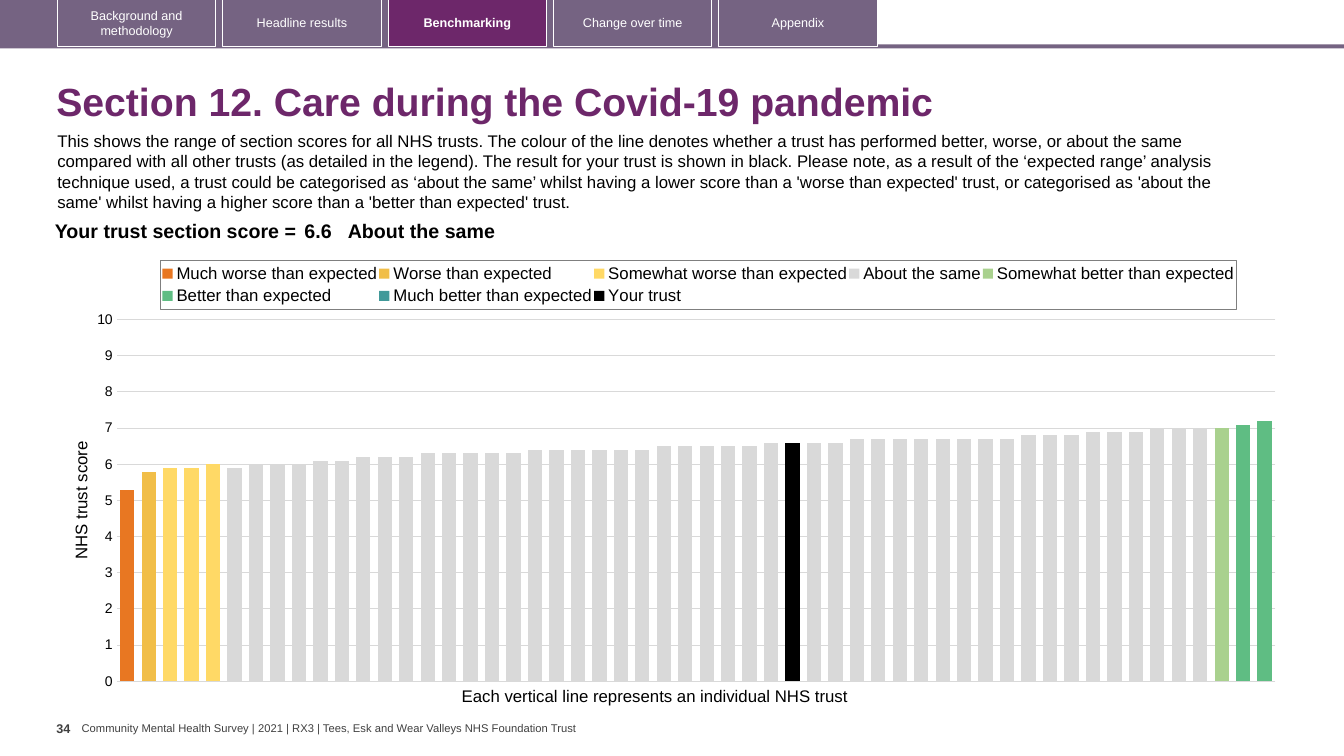
import copy

import lxml.etree
import pptx
import pptx.chart.data
import pptx.dml.color
import pptx.enum.chart
import pptx.enum.shapes
import pptx.enum.text
import pptx.oxml
import pptx.oxml.ns
import pptx.util

Inches, Pt = pptx.util.Inches, pptx.util.Pt
RGB = pptx.dml.color.RGBColor
qn = pptx.oxml.ns.qn
ALIGN = pptx.enum.text.PP_ALIGN
MIDDLE = pptx.enum.text.MSO_ANCHOR.MIDDLE
TICK = pptx.enum.chart.XL_TICK_MARK

BLACK = RGB(0x00, 0x00, 0x00)
WHITE = RGB(0xFF, 0xFF, 0xFF)
PLUM = RGB(0x6D, 0x27, 0x6A)
MAUVE = RGB(0x75, 0x63, 0x82)
SLATE = RGB(0x40, 0x40, 0x40)
SILVER = RGB(0xD9, 0xD9, 0xD9)

TABS = ["Background and methodology", "Headline results", "Benchmarking",
        "Change over time", "Appendix"]
ACTIVE = "Benchmarking"
INTRO = (
    "This shows the range of section scores for all NHS trusts. The colour of the line "
    "denotes whether a trust has performed better, worse, or about the same compared with "
    "all other trusts (as detailed in the legend). The result for your trust is shown in "
    "black. Please note, as a result of the ‘expected range’ analysis technique used, a "
    "trust could be categorised as ‘about the same’ whilst having a lower score than a "
    "'worse than expected' trust, or categorised as 'about the same' whilst having a higher "
    "score than a 'better than expected' trust.")
TRUSTS = 54
MIDRUN = [(5.9, 1), (6, 3), (6.1, 2), (6.2, 3), (6.3, 5), (6.4, 6), (6.5, 5), (6.6, 4),
          (6.7, 8), (6.8, 3), (6.9, 3), (7, 3)]
BANDS = [
    ("Much worse than expected", RGB(0xE8, 0x77, 0x22), 0, [5.3]),
    ("Worse than expected", RGB(0xF1, 0xBE, 0x48), 1, [5.8]),
    ("Somewhat worse than expected", RGB(0xFF, 0xD9, 0x66), 2, [5.9, 5.9, 6]),
    ("About the same", SILVER, 5, [score for score, count in MIDRUN for _ in range(count)]),
    ("Somewhat better than expected", RGB(0xA9, 0xD1, 0x8E), 51, [7]),
    ("Better than expected", RGB(0x5F, 0xBD, 0x83), 52, [7.1, 7.2]),
    ("Much better than expected", RGB(0x41, 0x99, 0x99), 0, []),
    ("Your trust", BLACK, 31, [6.6]),
]


def style(font, size, color, bold=False):
    """Set an Arial font."""
    font.name, font.size, font.bold = "Arial", Pt(size), bold
    font.color.rgb = color


def add_text(slide, box, text, size, color, bold=False, wrap=True, inset=(0.1, 0.05),
             anchor=pptx.enum.text.MSO_ANCHOR.TOP):
    """Add a one-paragraph text box and return its paragraph."""
    frame = slide.shapes.add_textbox(*map(Inches, box)).text_frame
    frame.word_wrap, frame.vertical_anchor = wrap, anchor
    frame.margin_left = frame.margin_right = Inches(inset[0])
    frame.margin_top = frame.margin_bottom = Inches(inset[1])
    para = frame.paragraphs[0]
    para.text = text
    style(para.font, size, color, bold)
    return para


def add_block(slide, box, fill=None, line=None):
    """Add a rectangle with an optional fill and outline."""
    block = slide.shapes.add_shape(
        pptx.enum.shapes.MSO_SHAPE.RECTANGLE, *map(Inches, box))
    block.shadow.inherit = False
    for part, color in ((block.fill, fill), (block.line.fill, line)):
        if color is None:
            part.background()
        else:
            part.solid()
            part.fore_color.rgb = color
    return block


def add_nav(slide, box):
    """Draw the tab bar across the top."""
    left, top, width, height = box
    add_block(slide, (left, top + height - 0.03, width, 0.04), MAUVE)
    add_block(slide, (left, top, 8.73, height), MAUVE)
    for i, label in enumerate(TABS):
        active = label == ACTIVE
        tab = add_block(slide, (left + 0.6 + 1.64 * i, top - 0.01, 1.57, height),
                        PLUM if active else None, WHITE)
        tab.line.width = Pt(0.75)
        tab.text_frame.word_wrap = True
        tab.text_frame.vertical_anchor = MIDDLE
        para = tab.text_frame.paragraphs[0]
        para.text, para.alignment = label, ALIGN.CENTER
        style(para.font, 9, WHITE, active)


def add_score(slide, box):
    """Add the section score row as a table."""
    left, top, width, height = box
    table = slide.shapes.add_table(1, 3, *map(Inches, box)).table
    table.first_row = table.horz_banding = False
    table.rows[0].height = Inches(height)
    items = [("Your trust section score =", 2.63, 0.04, ALIGN.RIGHT),
             ("6.6", 0.47, 0.04, ALIGN.LEFT),
             ("About the same", width - 3.1, 0, ALIGN.LEFT)]
    for i, (text, span, inset, align) in enumerate(items):
        table.columns[i].width = Inches(span)
        cell = table.cell(0, i)
        cell.fill.background()
        cell.margin_left = cell.margin_right = Inches(inset)
        cell.margin_top = cell.margin_bottom = Inches(0.04)
        para = cell.text_frame.paragraphs[0]
        para.text, para.alignment = text, align
        style(para.font, 14, BLACK, True)


def set_layout(parent, index, frame, inner=False):
    """Give a chart part a fixed place, as fractions of the chart."""
    for old in parent.findall(qn("c:layout")):
        parent.remove(old)
    layout = lxml.etree.Element(qn("c:layout"))
    manual = lxml.etree.SubElement(layout, qn("c:manualLayout"))
    pairs = [("layoutTarget", "inner")] if inner else []
    pairs += [("xMode", "edge"), ("yMode", "edge"), *zip("xywh", frame)]
    for tag, value in pairs:
        lxml.etree.SubElement(manual, qn("c:" + tag)).set("val", str(value))
    parent.insert(index, layout)


def split_axis(area):
    """Move the last series to a hidden second pair of axes."""
    first = area.find(qn("c:barChart"))
    second = copy.deepcopy(first)
    first.remove(first.findall(qn("c:ser"))[-1])
    for bars in second.findall(qn("c:ser"))[:-1]:
        second.remove(bars)
    first.addnext(second)
    cat = copy.deepcopy(area.find(qn("c:catAx")))
    val = copy.deepcopy(area.find(qn("c:valAx")))
    for tag in ("c:majorGridlines", "c:title"):
        val.remove(val.find(qn(tag)))
    val.find(qn("c:tickLblPos")).set("val", "none")
    val.find(qn("c:crosses")).set("val", "max")
    val.find(qn("c:axPos")).set("val", "r")
    area.find(qn("c:valAx")).addnext(val)
    val.addnext(cat)
    names = {cat.find(qn("c:axId")).get("val"): "5001",
             val.find(qn("c:axId")).get("val"): "5002"}
    for part in (second, cat, val):
        for tag in ("c:axId", "c:crossAx"):
            for node in part.findall(qn(tag)):
                node.set("val", names[node.get("val")])


def add_scores(slide, box):
    """Add the column chart of trust scores."""
    data = pptx.chart.data.CategoryChartData(number_format="General")
    data.categories = [str(i + 1) for i in range(TRUSTS)]
    for name, _, start, scores in BANDS:
        data.add_series(
            name, [None] * start + scores + [None] * (TRUSTS - start - len(scores)))
    chart = slide.shapes.add_chart(pptx.enum.chart.XL_CHART_TYPE.COLUMN_CLUSTERED,
                                   *map(Inches, box), data).chart
    style(chart.font, 10, BLACK)
    chart.has_title = False
    plot = chart.plots[0]
    plot.gap_width, plot.overlap, plot.vary_by_categories = 50, 100, False
    for bars, (_, color, _, _) in zip(plot.series, BANDS):
        bars.format.fill.solid()
        bars.format.fill.fore_color.rgb = color
    chart.category_axis.visible = False
    axis = chart.value_axis
    axis.minimum_scale, axis.maximum_scale, axis.major_unit = 0, 10, 1
    axis.major_tick_mark = axis.minor_tick_mark = TICK.NONE
    axis.format.line.fill.background()
    axis.major_gridlines.format.line.color.rgb = SILVER
    axis.major_gridlines.format.line.width = Pt(0.75)
    style(axis.tick_labels.font, 10, BLACK)
    axis.tick_label_position = pptx.enum.chart.XL_TICK_LABEL_POSITION.NEXT_TO_AXIS
    frame = axis.axis_title.text_frame
    frame.text = "NHS trust score"
    style(frame.paragraphs[0].font, 12, BLACK)
    turn = axis.axis_title._element.find(".//" + qn("a:bodyPr"))
    turn.set("rot", "-5400000")
    turn.set("vert", "horz")
    chart.has_legend = True
    legend = chart.legend
    legend.position = pptx.enum.chart.XL_LEGEND_POSITION.TOP
    legend.include_in_layout = False
    style(legend.font, 12, BLACK)
    root = legend._element
    set_layout(root, 1, (0.076, 0.025, 0.878, 0.11))
    root.find(qn("c:overlay")).addnext(pptx.oxml.parse_xml(
        f'<c:spPr {pptx.oxml.ns.nsdecls("c", "a")}><a:ln w="9525"><a:solidFill>'
        '<a:srgbClr val="7F7F7F"/></a:solidFill></a:ln></c:spPr>'))
    area = chart._chartSpace.find(".//" + qn("c:plotArea"))
    set_layout(area, 0, (0.04, 0.158, 0.946, 0.808), True)
    split_axis(area)


def add_foot(slide, box):
    """Add the page number and the survey name."""
    left, top, width, height = box
    add_text(slide, (left + 0.25, top + 0.06, width - 0.25, 0.13),
             "Community Mental Health Survey | 2021 | RX3 | "
             "Tees, Esk and Wear Valleys NHS Foundation Trust",
             8, SLATE, wrap=False, inset=(0, 0), anchor=MIDDLE)
    add_text(slide, (left, top, 0.25, height), "34", 9, SLATE, True, False, (0, 0.05))


def main():
    """Build the slide and save it."""
    deck = pptx.Presentation()
    deck.slide_width, deck.slide_height = Inches(13.33), Inches(7.5)
    slide = deck.slides.add_slide(deck.slide_layouts[6])
    add_nav(slide, (-0.03, 0, 13.36, 0.47))
    title = add_text(slide, (0.46, 0.67, 12.49, 0.72),
                     "Section 12. Care during the Covid-19 pandemic", 28, PLUM, True,
                     anchor=MIDDLE)
    title.line_spacing = 0.9
    add_text(slide, (0.47, 1.25, 12.13, 0.91), INTRO, 12, BLACK)
    add_scores(slide, (0.67, 2.47, 12.15, 4.44))
    add_text(slide, (4.48, 6.75, 4.11, 0.3),
             "Each vertical line represents an individual NHS trust", 12, BLACK, wrap=False)
    add_score(slide, (0.35, 2.15, 11.7, 0.31))
    add_foot(slide, (0.56, 7.1, 5.25, 0.4))
    deck.save("out.pptx")


if __name__ == "__main__":
    main()
